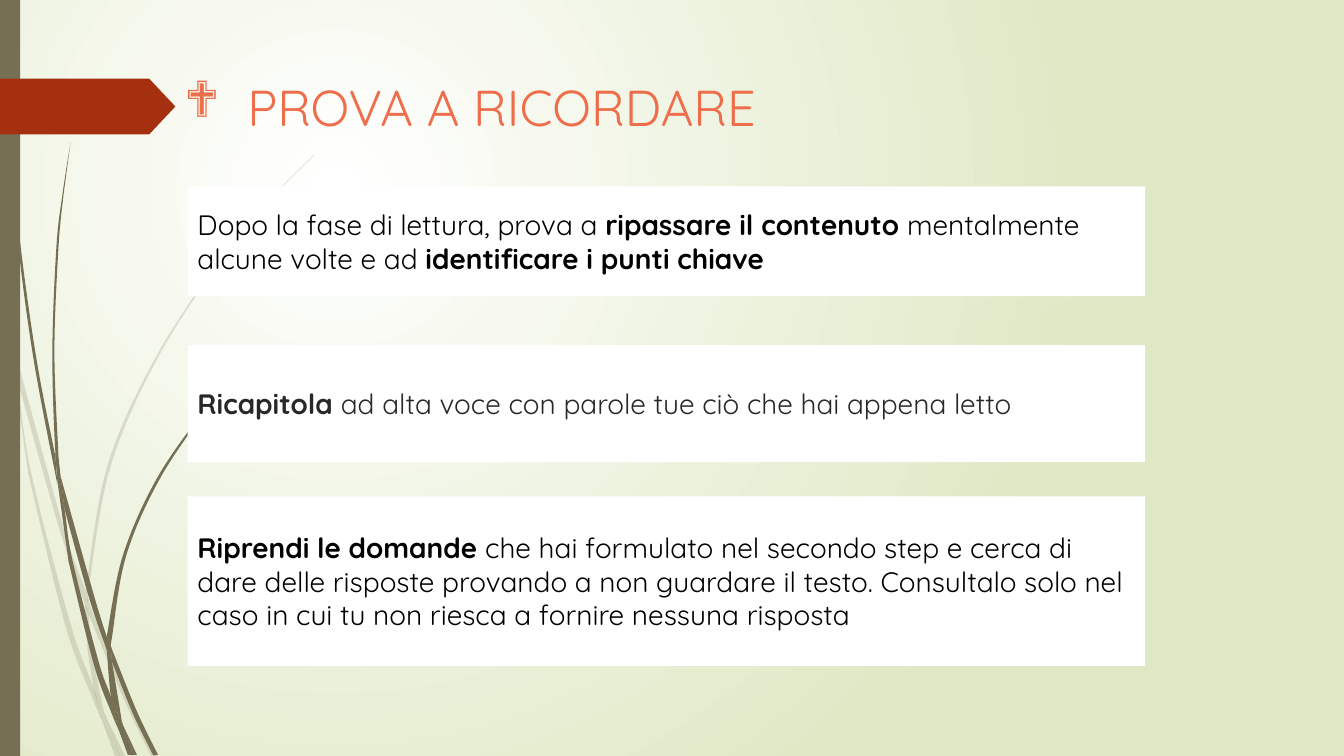
"""Build the slide "PROVA A RICORDARE" with its grass blades, tag and three cards."""
from dataclasses import dataclass
from typing import Any

from lxml.etree import SubElement
from pptx import Presentation
from pptx.dml.color import RGBColor
from pptx.enum.shapes import MSO_SHAPE
from pptx.enum.text import MSO_ANCHOR, MSO_AUTO_SIZE, PP_ALIGN
from pptx.oxml.ns import qn
from pptx.util import Pt

HUES = {
    "white": "FFFFFF", "lime": "DFE8C4", "olive": "766F54", "rust": "A53010",
    "coral": "EE6E4B", "black": "000000", "coal": "282828",
}
FACE = "Quicksand"
Side = list[tuple[float, float]]


@dataclass
class Blade:
    """A piece of grass: one smooth side down and one smooth side back."""
    out: Side
    back: Side


@dataclass
class Card:
    """A white card with runs of text, each marked bold or not."""
    top: float
    height: float
    hue: str
    runs: list[tuple[str, bool]]


PALE = [
    Blade([(0, 203), (6.5, 231.8), (7.9, 252)], [(7.2, 247.7), (0, 215.3)]),
    Blade([(10.1, 248.4), (44.6, 374.4), (61.2, 421.9)],
          [(60.5, 431.3), (41.8, 375.8), (12.2, 270.7)]),
    Blade([(63.4, 429.1), (66.2, 437), (91.4, 498.2), (111.6, 540)],
          [(108, 540), (88.6, 499.7), (63.4, 439.2)]),
    Blade([(75.6, 511.9), (89.3, 540)], [(85.7, 540)]),
    Blade([(7.9, 252), (12.2, 270.7), (22.3, 337.7), (50.4, 445.7), (67, 491.8), (71.3, 509)],
          [(72.7, 514.1), (66.2, 499), (46.8, 447.1), (20.2, 338.4)]),
    Blade([(60.5, 431.3), (63.4, 439.2), (65.5, 465.1), (74.2, 508.3), (75.6, 511.9)],
          [(69.1, 498.2), (67, 491.8), (62.6, 465.1)]),
    Blade([(224.6, 110.2), (193, 141.8), (164.2, 175.7), (113.8, 250.6), (77, 331.9),
           (61.2, 421.9)],
          [(63.4, 429.1), (63.4, 420.5), (79.2, 332.6), (115.2, 251.3), (164.9, 176.4),
           (193, 142.6), (224.6, 110.9)]),
    Blade([(72.7, 514.1), (85.7, 540)], [(82.1, 540)]),
    Blade([(61.2, 421.9), (63.4, 429.1)], [(63.4, 439.2), (60.5, 431.3)]),
    Blade([(67, 491.8), (71.3, 509), (72.7, 514.1), (85.7, 540)],
          [(75.6, 511.9), (69.1, 498.2)]),
]

DARK = [
    Blade([(2.2, 0), (2.9, 34.6), (5, 79.2), (12.2, 167.8), (23.8, 255.6), (41, 346.3)],
          [(39.6, 326.2), (25.9, 255.6), (13.7, 167), (5.8, 78.5), (3.6, 34.6), (2.9, 0)]),
    Blade([(43.2, 339.8), (67, 424.8), (76.3, 455)],
          [(76.3, 464.4), (63.4, 426.2), (46.1, 363.6)]),
    Blade([(79.2, 461.5), (81.4, 467.3), (97.9, 508.3), (113, 539.3)],
          [(109.4, 539.3), (95, 509.8), (79.9, 472.3)]),
    Blade([(41, 343.4), (46.1, 363.6), (51.8, 400.3), (70.6, 473), (79.2, 497.5),
           (83.5, 516.2)],
          [(84.2, 519.8), (79.9, 509.8), (67, 474.5), (49, 401)]),
    Blade([(50.4, 101.5), (44.6, 139), (40.3, 176.4), (37.4, 251.3), (39.6, 323.3),
           (43.2, 339.8)],
          [(41.8, 326.2), (38.9, 251.3), (41.8, 176.4), (45.4, 139)]),
    Blade([(87.8, 517.7), (97.9, 539.3)], [(95.8, 539.3)]),
    Blade([(39.6, 323.3), (43.2, 339.8), (46.1, 363.6)], [(41, 343.4), (39.6, 326.2)]),
    Blade([(187.2, 247.7), (166.3, 268.6), (146.9, 291.6), (112.3, 341.3), (87.8, 396.7),
           (76.3, 454.3)],
          [(79.2, 461.5), (79.9, 455.8), (90, 397.4), (113.8, 342.7), (147.6, 292.3),
           (166.3, 269.3), (187.9, 247.7)]),
    Blade([(84.2, 519.8), (91.4, 539.3)], [(94.3, 539.3)]),
    Blade([(76.3, 464.4), (79.2, 497.5), (83.5, 508.3), (87.8, 517.7)],
          [(87.1, 515.5), (79.9, 472.3), (78.5, 468.7)]),
    Blade([(76.3, 454.3), (79.2, 461.5), (79.9, 472.3)], [(78.5, 468.7), (76.3, 464.4)]),
    Blade([(79.2, 497.5), (83.5, 508.3), (87.8, 517.7), (95.8, 539.3)],
          [(93.6, 539.3), (84.2, 519.8), (83.5, 516.2)]),
]

CARDS = [
    Card(133.2, 78.4, "black", [
        ("Dopo la fase di lettura, prova a ", False), ("ripassare il contenuto ", True),
        ("mentalmente alcune volte e ad ", False), ("identificare i punti chiave", True)]),
    Card(246.6, 83.5, "coal", [
        ("Ricapitola ", True),
        ("ad alta voce con parole tue ciò che hai appena letto", False)]),
    Card(354.6, 121, "black", [
        ("Riprendi le domande ", True),
        ("che hai formulato nel secondo step e cerca di dare delle risposte provando a "
         "non guardare il testo. Consultalo solo nel caso in cui tu non riesca a "
         "fornire nessuna risposta", False)]),
]


def tint(name: str) -> RGBColor:
    """Return a named colour."""
    return RGBColor.from_string(HUES[name])


def apply(item: Any, **form: Any) -> None:
    """Set each format value on the item."""
    for key, value in form.items():
        setattr(item, key, value)


def style(run: Any, size: float, hue: str, bold: bool = False) -> None:
    """Format a run of text."""
    apply(run.font, name=FACE, size=Pt(size), bold=bold)
    run.font.color.rgb = tint(hue)


def paint(shape: Any, hue: str, alpha: int = 100) -> None:
    """Give a shape a flat fill with no line or shadow."""
    shape.shadow.inherit = False
    shape.line.fill.background()
    shape.fill.solid()
    shape.fill.fore_color.rgb = tint(hue)
    if alpha < 100:
        for node in shape.element.spPr.iter(qn("a:srgbClr")):
            SubElement(node, qn("a:alpha"), val=str(alpha * 1000))


def bend(dots: list[Any]) -> None:
    """Turn the straight steps between dots into smooth curves."""
    spots = [(int(dot.get("x")), int(dot.get("y"))) for dot in dots]
    ends = [spots[0], *spots, spots[-1]]
    for dot, (a, b, c, d) in zip(dots[1:], zip(ends, ends[1:], ends[2:], ends[3:])):
        step = dot.getparent()
        step.tag = qn("a:cubicBezTo")
        pulls = ([p + (r - o) // 6 for o, p, r in zip(a, b, c)],
                 [r - (s - p) // 6 for p, r, s in zip(b, c, d)])
        for x, y in pulls:
            SubElement(step, qn("a:pt"), x=str(x), y=str(y))
        step.append(dot)


def draw_blades(slide: Any, blades: list[Blade], alpha: int) -> None:
    """Draw a group of grass pieces."""
    tuft = slide.shapes.add_group_shape()
    for blade in blades:
        spots = [(Pt(x), Pt(y)) for x, y in blade.out + blade.back]
        pen = tuft.shapes.build_freeform(*spots[0])
        pen.add_line_segments(spots[1:], close=True)
        shape = pen.convert_to_shape()
        count = len(blade.out)
        dots = list(shape.element.iter(qn("a:pt")))[:len(spots)]
        bend(dots[:count])
        bend(dots[count:])
        paint(shape, "olive", alpha)


def draw_block(slide: Any, kind: Any, box: tuple[float, ...], hue: str) -> Any:
    """Draw a plain preset shape."""
    block = slide.shapes.add_shape(kind, *map(Pt, box))
    paint(block, hue)
    return block


def write(frame: Any, runs: list[tuple[str, bool]], size: float, hue: str) -> Any:
    """Write runs into the first paragraph and return it."""
    para = frame.paragraphs[0]
    para.alignment = PP_ALIGN.LEFT
    for text, bold in runs:
        run = para.add_run()
        run.text = text
        style(run, size, hue, bold)
    return para


def draw_card(slide: Any, card: Card) -> None:
    """Draw a card and its text."""
    box = (134, card.top, 684, card.height)
    frame = draw_block(slide, MSO_SHAPE.RECTANGLE, box, "white").text_frame
    apply(frame, word_wrap=True, vertical_anchor=MSO_ANCHOR.MIDDLE)
    write(frame, card.runs, 20, card.hue)


def draw_title(slide: Any) -> None:
    """Place the title with its diamond bullet."""
    title = slide.shapes.title
    apply(title, left=Pt(124.5), top=Pt(50.4), width=Pt(702), height=Pt(100.8))
    frame = title.text_frame
    apply(frame, word_wrap=True, auto_size=MSO_AUTO_SIZE.NONE,
          vertical_anchor=MSO_ANCHOR.TOP)
    props = write(frame, [("PROVA A RICORDARE", False)], 36, "coral")._p.get_or_add_pPr()
    props.set("marL", str(Pt(45)))
    props.set("indent", str(Pt(-45)))
    SubElement(props, qn("a:buFont"), typeface="Wingdings")
    SubElement(props, qn("a:buChar"), char="❖")


def draw_back(slide: Any) -> None:
    """Fill the background with a round gradient."""
    fill = slide.background.fill
    fill.gradient()
    for stop, hue in zip(fill.gradient_stops, ("white", "lime")):
        stop.color.rgb = tint(hue)
    line = next(slide.element.iter(qn("a:lin")))
    grad = line.getparent()
    grad.remove(line)
    ring = SubElement(grad, qn("a:path"), {"path": "circle"})
    SubElement(ring, qn("a:fillToRect"), l="50000", t="50000", r="100000", b="100000")


def main() -> None:
    """Build and save the slide."""
    deck = Presentation()
    apply(deck, slide_width=Pt(960), slide_height=Pt(540))
    slide = deck.slides.add_slide(deck.slide_layouts[5])
    draw_back(slide)
    draw_blades(slide, PALE, 20)
    draw_blades(slide, DARK, 100)
    draw_block(slide, MSO_SHAPE.RECTANGLE, (0, 0, 14.4, 540), "olive")
    tag = draw_block(slide, MSO_SHAPE.PENTAGON, (0, 56.2, 125.3, 39.8), "rust")
    tag.adjustments[0] = 0.47
    draw_title(slide)
    for card in CARDS:
        draw_card(slide, card)
    deck.save("out.pptx")


if __name__ == "__main__":
    main()
